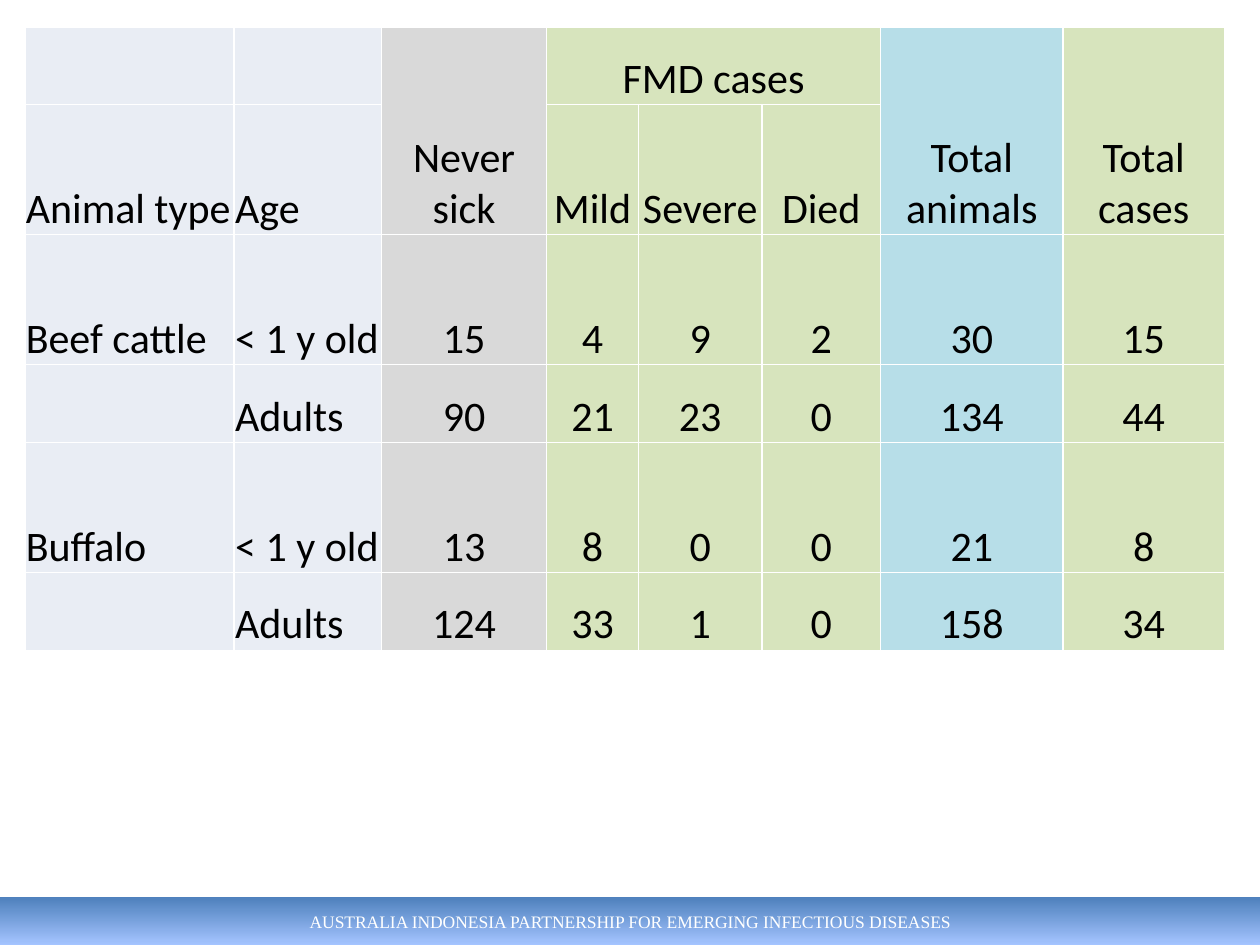
from dataclasses import dataclass

from lxml import etree
from pptx import Presentation
from pptx.dml.color import RGBColor
from pptx.enum.shapes import MSO_SHAPE
from pptx.enum.text import MSO_ANCHOR, PP_ALIGN
from pptx.oxml.ns import qn
from pptx.util import Cm, Pt

RECTANGLE = MSO_SHAPE.RECTANGLE
BOTTOM, MIDDLE = MSO_ANCHOR.BOTTOM, MSO_ANCHOR.MIDDLE
LEFT, CENTER = PP_ALIGN.LEFT, PP_ALIGN.CENTER


@dataclass(frozen=True)
class Theme:
    label: str = "E9EDF4"
    healthy: str = "D9D9D9"
    cases: str = "D7E4BD"
    total: str = "B7DEE8"
    white: str = "FFFFFF"
    black: str = "000000"
    footer_stops: tuple = ("4F81BD", "A4C4FF")
    table_font: str = "Calibri"
    table_size: int = 24
    footer_font: str = "Times New Roman"
    footer_size: int = 10
    border_width: int = 1


THEME = Theme()


def write_text(text_frame, text, alignment, font_name, size, color):
    paragraph = text_frame.paragraphs[0]
    paragraph.alignment = alignment
    run = paragraph.add_run()
    run.text = text
    for name, value in {"name": font_name, "size": Pt(size)}.items():
        setattr(run.font, name, value)
    run.font.color.rgb = RGBColor.from_string(color)


def add_borders(cell):
    """Draw all four cell borders; must run before the cell is filled."""
    properties = cell._tc.get_or_add_tcPr()
    for side in ("a:lnL", "a:lnR", "a:lnT", "a:lnB"):
        line = etree.SubElement(properties, qn(side), w=str(Pt(THEME.border_width)))
        fill = etree.SubElement(line, qn("a:solidFill"))
        etree.SubElement(fill, qn("a:srgbClr"), val=THEME.white)


presentation = Presentation()
presentation.slide_width = Cm(25.4)
presentation.slide_height = Cm(19.05)
slide = presentation.slides.add_slide(presentation.slide_layouts[6])

# Footer band
footer = slide.shapes.add_shape(RECTANGLE, Cm(0), Cm(18.09), Cm(25.4), Cm(0.96))
footer.shadow.inherit = False
footer.line.fill.background()
footer.fill.gradient()
footer.fill.gradient_angle = 270
for stop, color, position in zip(footer.fill.gradient_stops, THEME.footer_stops, (0, 1)):
    stop.color.rgb = RGBColor.from_string(color)
    stop.position = position
footer.text_frame.word_wrap = True
footer.text_frame.vertical_anchor = MIDDLE
write_text(footer.text_frame,
           "AUSTRALIA INDONESIA PARTNERSHIP FOR EMERGING INFECTIOUS DISEASES",
           CENTER, THEME.footer_font, THEME.footer_size, THEME.white)

# Case table
rows = [
    ["", "", "Never sick", "FMD cases", "", "", "Total animals", "Total cases"],
    ["Animal type", "Age", "", "Mild", "Severe", "Died", "", ""],
    ["Beef cattle", "< 1 y old", "15", "4", "9", "2", "30", "15"],
    ["", "Adults", "90", "21", "23", "0", "134", "44"],
    ["Buffalo", "< 1 y old", "13", "8", "0", "0", "21", "8"],
    ["", "Adults", "124", "33", "1", "0", "158", "34"],
]
short_row, tall_row = 1.57, 2.62
row_heights = [short_row, tall_row, tall_row, short_row, tall_row, short_row]
column_widths = [4.22, 2.97, 3.33, 1.85, 2.49, 2.39, 3.68, 3.25]
column_fills = ([THEME.label] * 2 + [THEME.healthy] + [THEME.cases] * 3
                + [THEME.total, THEME.cases])
label_columns = 2
cell_format = {
    "vertical_anchor": BOTTOM,
    "margin_left": Cm(0.02),
    "margin_right": Cm(0.02),
    "margin_top": Cm(0.02),
    "margin_bottom": Cm(0),
}

table = slide.shapes.add_table(
    len(rows), len(column_widths), Cm(0.5), Cm(0.54),
    Cm(sum(column_widths)), Cm(sum(row_heights))).table
table.first_row = False
table.horz_banding = False
for column, width in zip(table.columns, column_widths):
    column.width = Cm(width)
for row, height in zip(table.rows, row_heights):
    row.height = Cm(height)

for row_index, texts in enumerate(rows):
    for column_index, text in enumerate(texts):
        cell = table.cell(row_index, column_index)
        for name, value in cell_format.items():
            setattr(cell, name, value)
        add_borders(cell)
        cell.fill.solid()
        cell.fill.fore_color.rgb = RGBColor.from_string(column_fills[column_index])
        if text:
            alignment = LEFT if column_index < label_columns else CENTER
            write_text(cell.text_frame, text, alignment,
                       THEME.table_font, THEME.table_size, THEME.black)

for column_index in (2, 6, 7):
    table.cell(0, column_index).merge(table.cell(1, column_index))
table.cell(0, 3).merge(table.cell(0, 5))

presentation.save("out.pptx")
